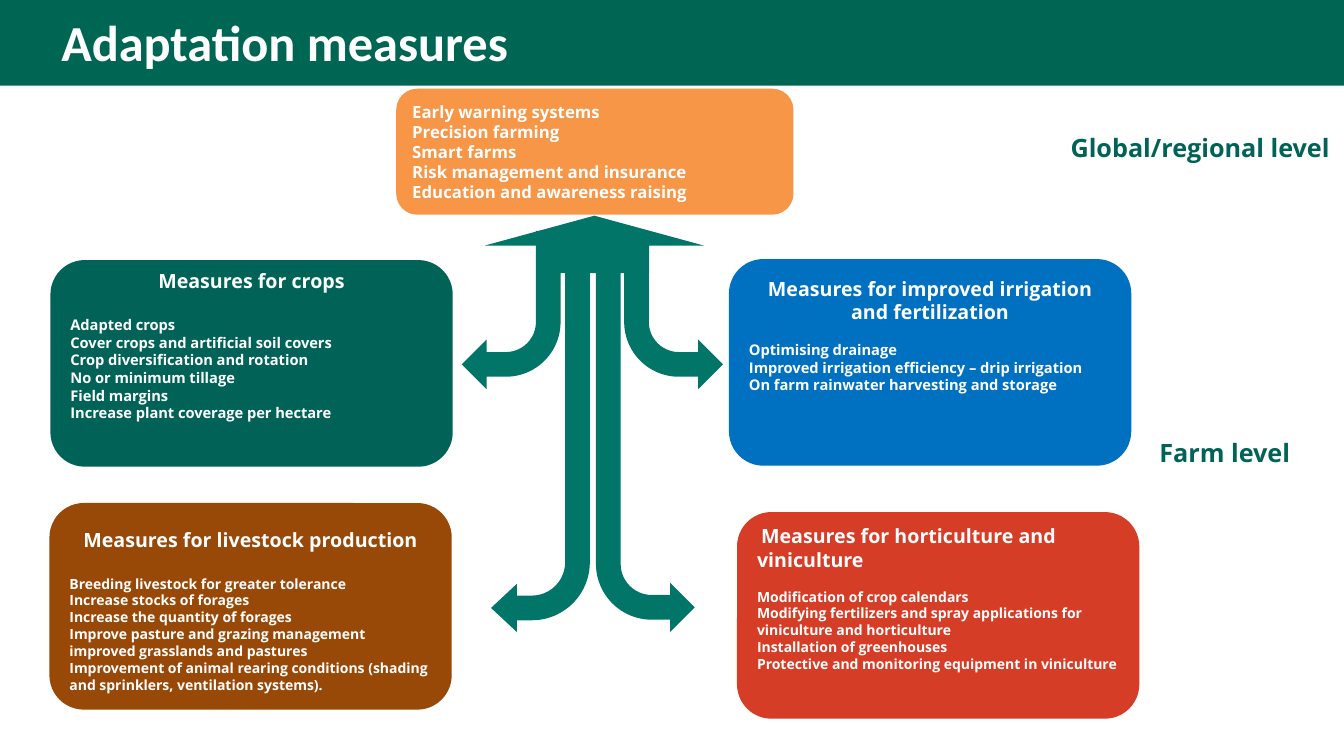
"""Build the adaptation measures slide."""
import pptx
import pptx.dml.color
import pptx.enum.shapes
import pptx.enum.text
import pptx.util

Inches = pptx.util.Inches
Pt = pptx.util.Pt
RGBColor = pptx.dml.color.RGBColor
ShapeType = pptx.enum.shapes.MSO_SHAPE
Anchor = pptx.enum.text.MSO_ANCHOR
Align = pptx.enum.text.PP_ALIGN

TITLE = "Adaptation measures"
CARDS = [
    {"at": (0.5, 2.58), "color": "crops", "heading": "Measures for crops",
     "gap": 17, "size": 10.5, "shift": -0.18, "measures": [
         "Adapted crops",
         "Cover crops and artificial soil covers",
         "Crop diversification and rotation",
         "No or minimum tillage",
         "Field margins",
         "Increase plant coverage per hectare"]},
    {"at": (7.23, 2.57), "color": "irrigation",
     "heading": "Measures for improved irrigation and fertilization",
     "gap": 12.5, "size": 10.5, "shift": -0.27, "measures": [
         "Optimising drainage",
         "Improved irrigation efficiency – drip irrigation",
         "On farm rainwater harvesting and storage"]},
    {"at": (7.31, 5.08), "color": "horticulture",
     "heading": "Measures for horticulture and viniculture",
     "align": Align.LEFT, "indent": 0.04,
     "gap": 12, "size": 10, "shift": -0.17, "measures": [
         "Modification of crop calendars",
         "Modifying fertilizers and spray applications for viniculture and horticulture",
         "Installation of greenhouses",
         "Protective and monitoring equipment in viniculture"]},
    {"at": (0.49, 4.99), "color": "livestock",
     "heading": "Measures for livestock production",
     "gap": 17, "size": 10, "shift": 0.04, "measures": [
         "Breeding livestock for greater tolerance",
         "Increase stocks of forages",
         "Increase the quantity of forages",
         "Improve pasture and grazing management",
         "improved grasslands and pastures",
         "Improvement of animal rearing conditions (shading and sprinklers, ventilation systems)."]},
    {"at": (3.93, 0.88), "box": (3.94, 1.25), "color": "regional",
     "size": 12, "shift": 0, "measures": [
         "Early warning systems",
         "Precision farming",
         "Smart farms",
         "Risk management and insurance",
         "Education and awareness raising"]},
]
CARD_BOX = (3.99, 2.05)
LEVELS = [("Global/regional level", (10.52, 1.26, 2.8, 0.4)),
          ("Farm level", (11.4, 4.29, 1.51, 0.4))]
BRANCHES = [
    ((4.87, 2.29, 0.98, 3.98), (0.25, 0.244, 0.261, 0.587), False),
    ((5.91, 2.29, 0.98, 3.98), (0.25, 0.25, 0.25, 0.565), True),
    ((4.58, 2.29, 0.98, 1.57), (0.25, 0.25, 0.25, 0.554), False),
    ((6.19, 2.29, 0.98, 1.57), (0.25, 0.25, 0.25, 0.554), True),
]
ARROWHEAD = ((4.81, 2.14, 2.17, 0.57), (0.5, 0.519))
THEME = {
    "title_font": "Calibri", "font": "Open Sans",
    "title_size": 36, "level_size": 18, "heading_size": 14,
    "white": "FFFFFF", "banner": "006654", "level": "016357", "arrow": "017567",
    "crops": "016357", "irrigation": "0070C0", "horticulture": "D63D27",
    "livestock": "984807", "regional": "F79646",
}


def add_filled(slide, kind, bounds, color, adjustments=()):
    shape = slide.shapes.add_shape(kind, *map(Inches, bounds))
    shape.shadow.inherit = False
    shape.fill.solid()
    shape.fill.fore_color.rgb = RGBColor.from_string(THEME[color])
    shape.line.fill.background()
    for index, value in enumerate(adjustments):
        shape.adjustments[index] = value
    return shape


def write(paragraph, text, size, color="white", font="font", align=Align.LEFT):
    paragraph.text = text
    paragraph.alignment = align
    paragraph.font.name = THEME[font]
    paragraph.font.size = Pt(size)
    paragraph.font.bold = True
    paragraph.font.color.rgb = RGBColor.from_string(THEME[color])


def add_label(slide, bounds, text, size, color, font="font", wrap=False):
    label = slide.shapes.add_textbox(*map(Inches, bounds))
    label.text_frame.word_wrap = wrap
    label.text_frame.vertical_anchor = Anchor.MIDDLE
    write(label.text_frame.paragraphs[0], text, size, color, font)


def add_card(slide, card):
    bounds = card["at"] + card.get("box", CARD_BOX)
    shape = add_filled(slide, ShapeType.ROUNDED_RECTANGLE, bounds, card["color"])
    frame = shape.text_frame
    frame.word_wrap = True
    frame.vertical_anchor = Anchor.MIDDLE
    frame.margin_top = Inches(0.05 + 2 * max(card["shift"], 0))
    frame.margin_bottom = Inches(0.05 + 2 * max(-card["shift"], 0))
    paragraph = frame.paragraphs[0]
    if "heading" in card:
        write(paragraph, card["heading"], THEME["heading_size"],
              align=card.get("align", Align.CENTER))
        paragraph.space_after = Pt(card["gap"])
        if "indent" in card:
            paragraph._p.get_or_add_pPr().set("indent", str(Inches(card["indent"])))
        paragraph = frame.add_paragraph()
    for index, measure in enumerate(card["measures"]):
        if index:
            paragraph = frame.add_paragraph()
        write(paragraph, measure, card["size"])


def add_arrow(slide, kind, bounds, adjustments, mirrored=False):
    arrow = add_filled(slide, kind, bounds, "arrow", adjustments)
    arrow.rotation = 180
    if mirrored:
        arrow._element.spPr.xfrm.set("flipH", "1")


def main():
    presentation = pptx.Presentation()
    presentation.slide_width = Inches(13.33)
    presentation.slide_height = Inches(7.5)
    slide = presentation.slides.add_slide(presentation.slide_layouts[6])
    add_filled(slide, ShapeType.RECTANGLE, (0, 0, 13.33, 0.85), "banner")
    add_label(slide, (0.51, 0.04, 12.3, 0.74), TITLE, THEME["title_size"],
              "white", "title_font", wrap=True)
    for card in CARDS:
        add_card(slide, card)
    for text, bounds in LEVELS:
        add_label(slide, bounds, text, THEME["level_size"], "level")
    for bounds, adjustments, mirrored in BRANCHES:
        add_arrow(slide, ShapeType.BENT_ARROW, bounds, adjustments, mirrored)
    add_arrow(slide, ShapeType.DOWN_ARROW, *ARROWHEAD)
    presentation.save("out.pptx")


if __name__ == "__main__":
    main()
